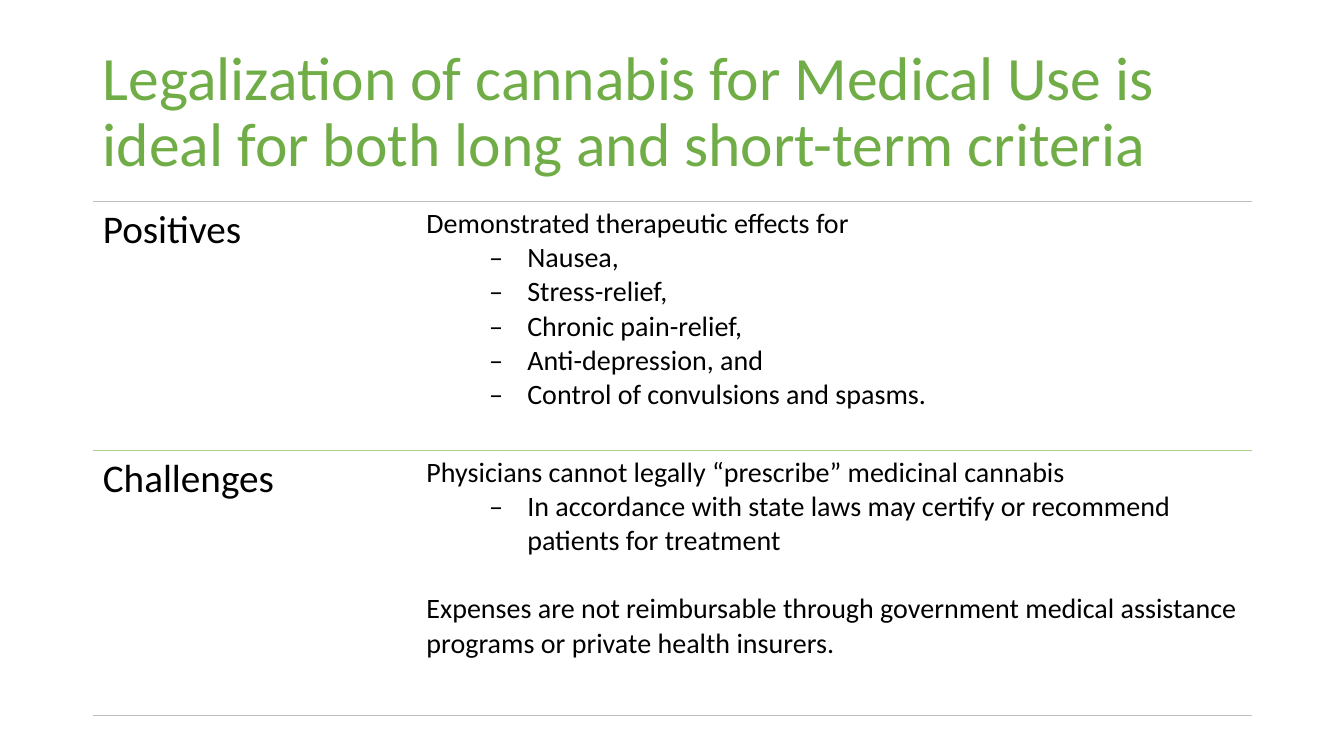
import pptx
import pptx.dml.color
import pptx.enum.text
import pptx.oxml
import pptx.oxml.ns
import pptx.util
from pptx.util import Inches

COLORS = {"title": "70AD47", "text": "000000", "outer": "BFBFBF", "divider": "A9D18E"}
FONT = "Calibri"
NS = pptx.oxml.ns.nsdecls("a")

TITLE = "Legalization of cannabis for Medical Use is ideal for both long and short-term criteria"
# Each row: heading, then (text, is bulleted, space before in points)
ROWS = [
    ("Positives", [
        ("Demonstrated therapeutic effects for", False, 0),
        ("Nausea,", True, 0),
        ("Stress-relief,", True, 0),
        ("Chronic pain-relief,", True, 0),
        ("Anti-depression, and", True, 0),
        ("Control of convulsions and spasms.", True, 0),
    ]),
    ("Challenges", [
        ("Physicians cannot legally “prescribe” medicinal cannabis", False, 0),
        ("In accordance with state laws may certify or recommend patients for treatment", True, 0),
        ("Expenses are not reimbursable through government medical assistance "
         "programs or private health insurers.", False, 24),
    ]),
]
COL_WIDTHS = [3.21, 8.29]
ROW_HEIGHTS = [2.47, 2.63]


def write(p, text, size, color="text", bullet=False, before=0, spacing=1.0):
    p.alignment = pptx.enum.text.PP_ALIGN.LEFT
    p.line_spacing = spacing
    p.space_before = pptx.util.Pt(before)
    r = p.add_run()
    r.text = text
    r.font.name = FONT
    r.font.size = pptx.util.Pt(size)
    r.font.bold = False
    r.font.color.rgb = pptx.dml.color.RGBColor.from_string(COLORS[color])
    if bullet:
        pPr = p._p.get_or_add_pPr()
        pPr.set("marL", str(Inches(1)))
        pPr.set("indent", str(Inches(-0.38)))
        pPr.append(pptx.oxml.parse_xml(f'<a:buFont {NS} typeface="{FONT}"/>'))
        pPr.append(pptx.oxml.parse_xml(f'<a:buChar {NS} char="–"/>'))


def set_borders(cell, top, bottom):
    """Rule the cell above and below, with open sides."""
    tcPr = cell._tc.get_or_add_tcPr()
    sides = [("lnL", None), ("lnR", None), ("lnT", top), ("lnB", bottom)]
    for i, (tag, color) in enumerate(sides):
        fill = "<a:noFill/>"
        if color:
            fill = f'<a:solidFill><a:srgbClr val="{COLORS[color]}"/></a:solidFill>'
        tcPr.insert(i, pptx.oxml.parse_xml(f'<a:{tag} {NS} w="12700">{fill}</a:{tag}>'))


def add_title(slide, left, top, width, height):
    sp = slide.shapes.title
    sp.left, sp.top, sp.width, sp.height = map(Inches, (left, top, width, height))
    tf = sp.text_frame
    tf.word_wrap = True
    tf.auto_size = pptx.enum.text.MSO_AUTO_SIZE.NONE
    tf.vertical_anchor = pptx.enum.text.MSO_ANCHOR.MIDDLE
    write(tf.paragraphs[0], TITLE, 44, color="title", spacing=0.9)


def add_criteria_table(slide, left, top, width, height):
    frame = slide.shapes.add_table(len(ROWS), len(COL_WIDTHS),
                                   *map(Inches, (left, top, width, height)))
    table = frame.table
    table.first_row = table.horz_banding = False
    for col, w in zip(table.columns, COL_WIDTHS):
        col.width = Inches(w)
    for row, h in zip(table.rows, ROW_HEIGHTS):
        row.height = Inches(h)

    last = len(ROWS) - 1
    for i, (heading, points) in enumerate(ROWS):
        for cell in table.rows[i].cells:
            cell.fill.background()
            set_borders(cell, "divider" if i else "outer",
                        "divider" if i < last else "outer")
        write(table.cell(i, 0).text_frame.paragraphs[0], heading, 28)
        tf = table.cell(i, 1).text_frame
        for j, (text, bullet, before) in enumerate(points):
            p = tf.add_paragraph() if j else tf.paragraphs[0]
            write(p, text, 20, bullet=bullet, before=before)


def main():
    prs = pptx.Presentation()
    prs.slide_width, prs.slide_height = Inches(13.33), Inches(7.5)
    slide = prs.slides.add_slide(prs.slide_layouts.get_by_name("Title Only"))
    add_title(slide, 0.92, 0.4, 11.5, 1.45)
    add_criteria_table(slide, 0.92, 2, 11.5, 5.1)
    prs.save("out.pptx")


if __name__ == "__main__":
    main()
